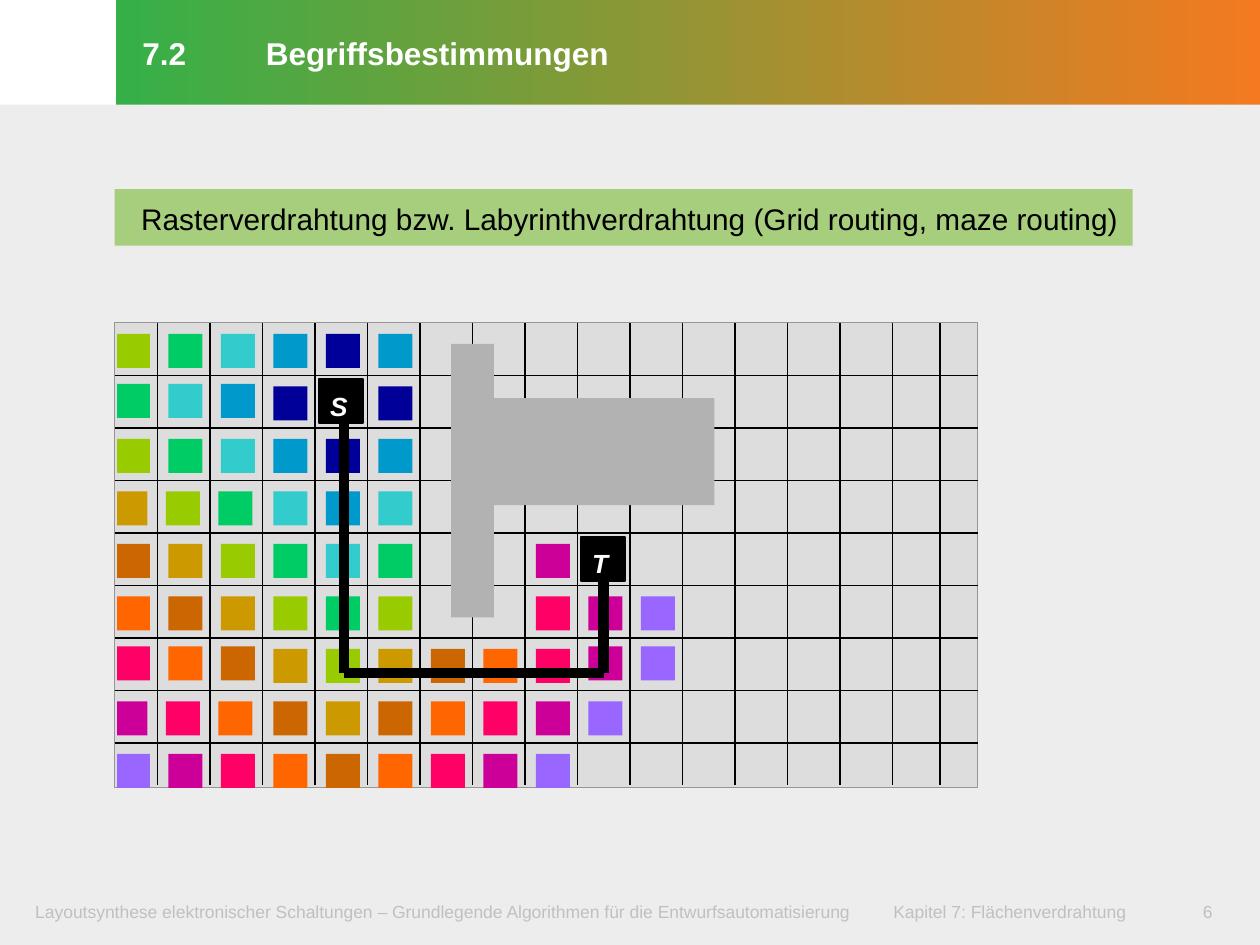
from pptx import Presentation
from pptx.dml.color import RGBColor
from pptx.enum.shapes import MSO_CONNECTOR, MSO_SHAPE
from pptx.enum.text import MSO_ANCHOR, MSO_AUTO_SIZE, PP_ALIGN
from pptx.oxml.ns import qn
from pptx.util import Inches, Pt
from lxml.etree import SubElement

COLORS = {
    "page": "EDEDED", "footer": "C0C0C0", "white": "FFFFFF", "black": "000000",
    "title_start": "35B048", "title_end": "F47920", "banner": "A7CE7C",
    "grid": "DDDDDD", "grid_edge": "969696", "obstacle": "B2B2B2",
    1: "000099", 2: "0099CC", 3: "33CCCC", 4: "00CC66", 5: "99CC00", 6: "CC9900",
    7: "CC6600", 8: "FF6600", 9: "FF0066", 10: "CC0099", 11: "9966FF",
}
WAVE = [
    [5, 4, 3, 2, 1, 2],
    [4, 3, 2, 1, 0, 1],
    [5, 4, 3, 2, 1, 2],
    [6, 5, 4, 3, 2, 3],
    [7, 6, 5, 4, 3, 4, 0, 0, 10],
    [8, 7, 6, 5, 4, 5, 0, 0, 9, 10, 11],
    [9, 8, 7, 6, 5, 6, 7, 8, 9, 10, 11],
    [10, 9, 8, 7, 6, 7, 8, 9, 10, 11],
    [11, 10, 9, 8, 7, 8, 9, 10, 11],
]
PITCH = 5 / 12
LABEL_INSETS = (0.21, 0.05, 0.1, 0.07)
FOOTER_INSETS = (0.12, 0.06, 0.12, 0.06)


def rgb(key):
    return RGBColor.from_string(COLORS[key])


def place(part, box):
    part.left, part.top, part.width, part.height = (Inches(v) for v in box)


def add_rect(shapes, box, color, edge=None, weight=0.75):
    rect = shapes.add_shape(MSO_SHAPE.RECTANGLE, *(Inches(v) for v in box))
    rect.shadow.inherit = False
    rect.fill.solid()
    rect.fill.fore_color.rgb = rgb(color)
    if edge:
        rect.line.color.rgb = rgb(edge)
        rect.line.width = Pt(weight)
    else:
        rect.line.fill.background()
    return rect


def add_line(shapes, start, end, weight):
    line = shapes.add_connector(
        MSO_CONNECTOR.STRAIGHT, *(Inches(v) for v in (*start, *end)))
    line.line.color.rgb = rgb("black")
    line.line.width = Pt(weight)
    SubElement(line._element.spPr, qn("a:effectLst"))


def write(part, words, size, color, insets, wrap=True, bold=False, italic=False,
          align=PP_ALIGN.LEFT, anchor=MSO_ANCHOR.TOP, spacing=None, tab=None):
    frame = part.text_frame
    frame.word_wrap = wrap
    frame.auto_size = MSO_AUTO_SIZE.NONE if wrap else MSO_AUTO_SIZE.SHAPE_TO_FIT_TEXT
    frame.vertical_anchor = anchor
    (frame.margin_left, frame.margin_top,
     frame.margin_right, frame.margin_bottom) = (Inches(v) for v in insets)
    paragraph = frame.paragraphs[0]
    paragraph.alignment = align
    if spacing:
        paragraph.line_spacing = Pt(spacing)
    if tab:
        stops = SubElement(paragraph._p.get_or_add_pPr(), qn("a:tabLst"))
        SubElement(stops, qn("a:tab"), pos=str(Inches(tab)), algn="l")
    run = paragraph.add_run()
    run.text = words
    run.font.name = "Arial"
    run.font.size = Pt(size)
    run.font.bold = bold
    run.font.italic = italic
    run.font.color.rgb = rgb(color)


def add_words(shapes, box, words, *style, **options):
    write(shapes.add_textbox(*(Inches(v) for v in box)), words, *style, **options)


def build_title(slide, box):
    title = slide.shapes.title
    place(title, box)
    title.fill.gradient()
    title.fill.gradient_angle = 0
    for stop, key in zip(title.fill.gradient_stops, ("title_start", "title_end")):
        stop.color.rgb = rgb(key)
    write(title, "7.2\tBegriffsbestimmungen", 18, "white", LABEL_INSETS, bold=True,
          anchor=MSO_ANCHOR.MIDDLE, spacing=23.5, tab=0.98)


def build_footer(slide, box):
    left, top, width, height = box
    number_width = 0.59
    add_words(slide.shapes, (left, top, width - number_width + 0.04, height),
              "Layoutsynthese elektronischer Schaltungen – Grundlegende Algorithmen "
              "für die Entwurfsautomatisierung\tKapitel 7: Flächenverdrahtung",
              10, "footer", FOOTER_INSETS, tab=6.81)
    add_words(slide.shapes, (left + width - number_width, top, number_width, height),
              "6", 10, "footer", FOOTER_INSETS, align=PP_ALIGN.CENTER)


def build_banner(slide, box):
    banner = add_rect(slide.shapes, box, "banner")
    write(banner, "Rasterverdrahtung bzw. Labyrinthverdrahtung (Grid routing, maze routing)",
          17, "black", LABEL_INSETS, wrap=False, spacing=23.5)


def add_grid_lines(shapes, left, top, width, height):
    for row in range(8):
        y = top + 0.42 + row * PITCH
        add_line(shapes, (left, y), (left + width, y), 0.75)
    for x in [left + 0.34 + column * PITCH for column in range(15)] + [left + 6.55]:
        add_line(shapes, (x, top), (x, top + height - 0.02), 0.75)


def add_wave(shapes, left, top):
    for row, levels in enumerate(WAVE):
        for column, level in enumerate(levels):
            if not level:
                continue
            outer = column < 3 or column > 8
            x = left + 0.01 + column * PITCH
            y = top + 0.09 + row * PITCH
            if row in (3, 7) and column < 3:
                x -= 0.02
            if row in (1, 6) and outer:
                y -= 0.02
            trim = max(0, left + 0.02 - x)
            add_rect(shapes, (x + trim, y, 0.27 - trim, 0.27), level)


def build_routing_grid(slide, box):
    left, top, width, height = box
    shapes = slide.shapes.add_group_shape().shapes
    source = (left + 1.62, top + 0.45)
    target = (left + 3.7, top + 1.7)
    add_rect(shapes, box, "grid", "grid_edge")
    for x, y in (source, target):
        add_rect(shapes, (x, y, 0.35, 0.35), "black", "black", 1)
    add_grid_lines(shapes, *box)
    add_wave(shapes, left, top)

    source_x, target_x, bend_y = left + 1.82, left + 3.88, top + 2.78
    route = [(source_x, top + 0.74), (source_x, bend_y),
             (target_x, bend_y), (target_x, top + 1.93)]
    for start, end in zip(route, route[1:]):
        add_line(shapes, start, end, 6)

    add_rect(shapes, (left + 2.67, top + 0.17, 0.34, 2.17), "obstacle")
    add_rect(shapes, (left + 3.01, top + 0.6, 1.75, 0.85), "obstacle")
    for letter, (x, y) in (("S", source), ("T", target)):
        add_words(shapes, (x - 0.12, y - 0.04, 0.44, 0.45), letter, 15, "white",
                  LABEL_INSETS, wrap=False, bold=True, italic=True, spacing=23.5)


def main():
    deck = Presentation()
    deck.slide_width, deck.slide_height = Inches(10), Inches(7.5)
    slide = deck.slides.add_slide(deck.slide_layouts[5])
    add_rect(slide.shapes, (0, 0.83, 10, 6.67), "page")
    build_footer(slide, (0.16, 7.09, 9.72, 0.32))
    build_title(slide, (0.92, 0, 9.08, 0.83))
    build_banner(slide, (0.91, 1.5, 8.08, 0.45))
    build_routing_grid(slide, (0.91, 2.56, 6.85, 3.69))
    deck.save("out.pptx")


if __name__ == "__main__":
    main()
